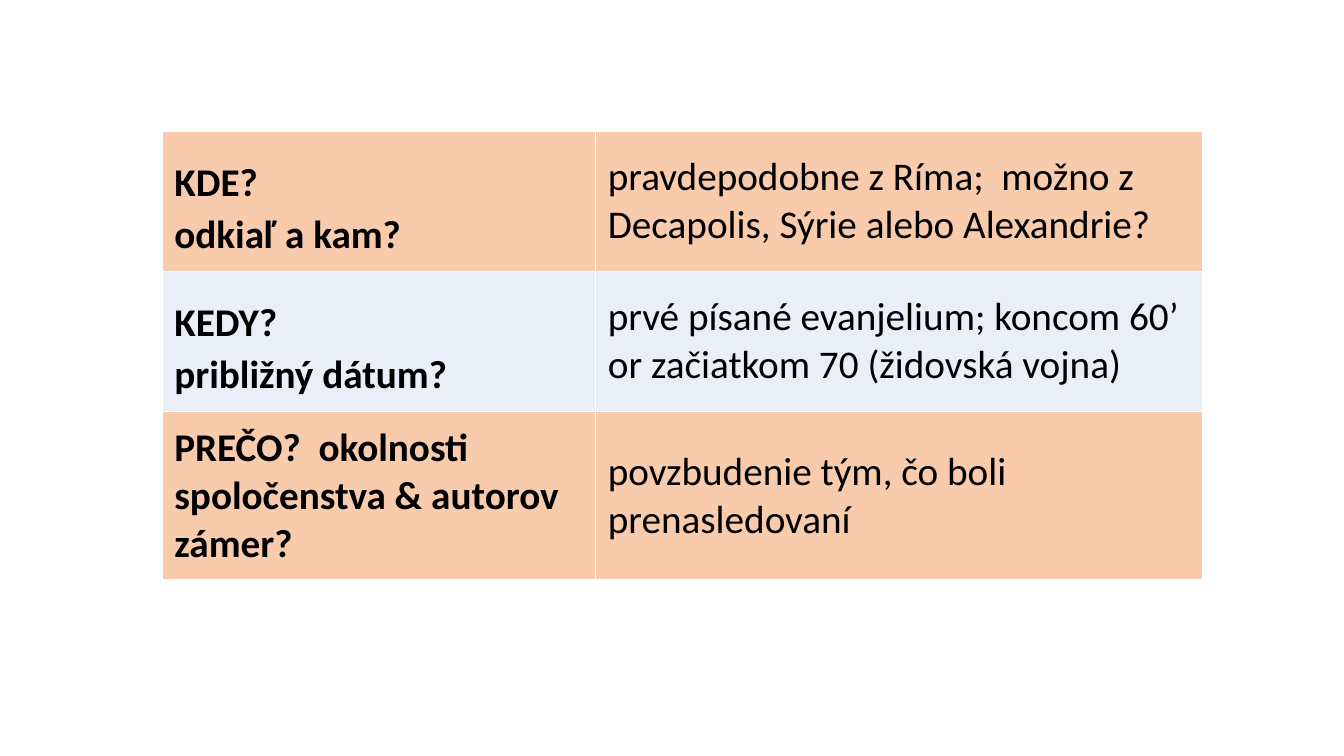
from lxml.etree import SubElement
from pptx import Presentation
from pptx.dml.color import RGBColor
from pptx.enum.text import MSO_ANCHOR
from pptx.oxml.ns import qn
from pptx.util import Inches, Pt

PEACH, PALE_BLUE, WHITE, BLACK = "F8CBAD", "EAEFF7", "FFFFFF", "000000"
COL_WIDTHS = [4.3, 6.02]
ROW_HEIGHTS = [1.39, 1.39, 1.67]
# Each question is a list of lines.
ROWS = [
    (["KDE?", "odkiaľ a kam?"],
     "pravdepodobne z Ríma;\u00a0 možno z Decapolis, Sýrie alebo Alexandrie?"),
    (["KEDY?", "približný dátum?"],
     "prvé písané evanjelium; koncom 60’ or začiatkom 70 (židovská vojna)"),
    (["PREČO?\u00a0 okolnosti spoločenstva & autorov zámer?"],
     "povzbudenie tým, čo boli prenasledovaní"),
]


def rgb(color):
    return RGBColor.from_string(color)


def add_run(p, text, bold, size=28):
    r = p.add_run()
    r.text = text
    r.font.name = "Calibri"
    r.font.size = Pt(size)
    r.font.bold = bold
    r.font.color.rgb = rgb(BLACK)


def add_borders(cell, color, width):
    tc_pr = cell._tc.get_or_add_tcPr()
    for i, side in enumerate(("lnL", "lnR", "lnT", "lnB")):
        ln = SubElement(tc_pr, qn(f"a:{side}"), w=str(Pt(width)))
        fill = SubElement(ln, qn("a:solidFill"))
        SubElement(fill, qn("a:srgbClr"), val=color)
        tc_pr.remove(ln)
        tc_pr.insert(i, ln)


def fill_cell(cell, lines, color, bold):
    """Write the lines with a larger space before each line break."""
    cell.margin_left = cell.margin_right = Inches(0.12)
    cell.margin_top = cell.margin_bottom = Inches(0.12)
    cell.vertical_anchor = MSO_ANCHOR.MIDDLE
    cell.fill.solid()
    cell.fill.fore_color.rgb = rgb(color)
    add_borders(cell, WHITE, 1)
    p = cell.text_frame.paragraphs[0]
    for i, line in enumerate(lines):
        if i:
            add_run(p, " ", bold, 40)
            p.add_line_break()
        add_run(p, line, bold)


def add_question_table(s):
    frame = s.shapes.add_table(len(ROWS), len(COL_WIDTHS), Inches(1.61), Inches(1.3),
                               Inches(sum(COL_WIDTHS)), Inches(sum(ROW_HEIGHTS)))
    table = frame.table
    table.first_row = False
    for col, width in zip(table.columns, COL_WIDTHS):
        col.width = Inches(width)
    for i, (question, answer) in enumerate(ROWS):
        table.rows[i].height = Inches(ROW_HEIGHTS[i])
        color = PALE_BLUE if i % 2 else PEACH
        fill_cell(table.cell(i, 0), question, color, True)
        fill_cell(table.cell(i, 1), [answer], color, False)


def main():
    prs = Presentation()
    prs.slide_width, prs.slide_height = Inches(13.33), Inches(7.5)
    s = prs.slides.add_slide(prs.slide_layouts[6])
    add_question_table(s)
    prs.save("out.pptx")


if __name__ == "__main__":
    main()
